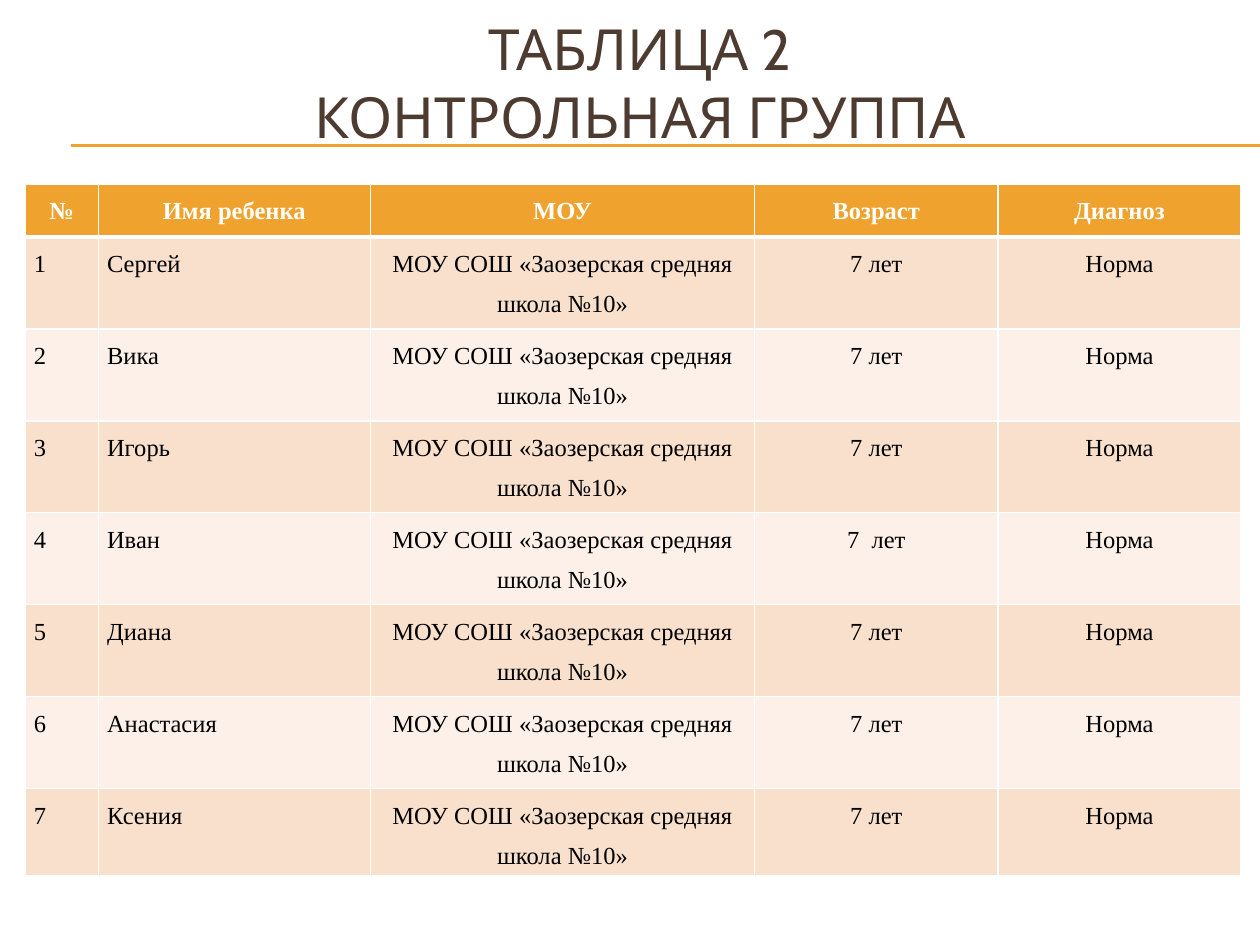
from lxml.etree import SubElement
from pptx import Presentation
from pptx.dml.color import RGBColor
from pptx.enum.shapes import MSO_CONNECTOR
from pptx.enum.text import MSO_ANCHOR, MSO_AUTO_SIZE, PP_ALIGN
from pptx.oxml.ns import qn
from pptx.util import Inches, Pt

WHITE = RGBColor(0xFF, 0xFF, 0xFF)
BLACK = RGBColor(0x00, 0x00, 0x00)
BROWN = RGBColor(0x4E, 0x3B, 0x30)
ORANGE = RGBColor(0xF0, 0xA2, 0x2E)
PEACH = RGBColor(0xF9, 0xE0, 0xCD)
CREAM = RGBColor(0xFC, 0xF0, 0xE8)

SCHOOL = "МОУ СОШ «Заозерская средняя школа №10»"
AGE = "7 лет"
DIAGNOSIS = "Норма"
HEADINGS = ["№", "Имя ребенка", "МОУ", "Возраст", "Диагноз"]
CHILDREN = [("Сергей", AGE), ("Вика", AGE), ("Игорь", AGE), ("Иван", "7  лет"),
            ("Диана", AGE), ("Анастасия", AGE), ("Ксения", AGE)]
COLUMN_WIDTHS = [0.58, 2.16, 3.05, 1.93, 1.93]
ROW_HEIGHTS = [0.42] + [0.73] * 6 + [0.69]


class SlideBuilder:
    title_font = "Cabin"
    table_font = "Times New Roman"

    def __init__(self, slide):
        self.slide = slide

    def add_run(self, paragraph, text, font_name, size, color, bold=False):
        run = paragraph.add_run()
        run.text = text
        run.font.name = font_name
        run.font.size = Pt(size)
        run.font.color.rgb = color
        run.font.bold = bold

    def rule(self, left, right, y):
        line = self.slide.shapes.add_connector(
            MSO_CONNECTOR.STRAIGHT, Inches(left), Inches(y), Inches(right), Inches(y))
        line.line.color.rgb = ORANGE
        line.line.width = Pt(0.75)
        SubElement(line._element.spPr, qn("a:effectLst"))

    def title(self, lines, left, top, width, height):
        heading = self.slide.shapes.title
        heading.left, heading.top = Inches(left), Inches(top)
        heading.width, heading.height = Inches(width), Inches(height)
        frame = heading.text_frame
        frame.word_wrap = True
        frame.auto_size = MSO_AUTO_SIZE.NONE
        frame.vertical_anchor = MSO_ANCHOR.BOTTOM
        frame.margin_bottom = Inches(0.23)
        paragraph = frame.paragraphs[0]
        paragraph.alignment = PP_ALIGN.CENTER
        paragraph.line_spacing = Pt(39)
        for index, text in enumerate(lines):
            if index:
                paragraph.add_line_break()
            self.add_run(paragraph, text, self.title_font, 32.4, BROWN)

    def border(self, cell, side, width):
        properties = cell._tc.get_or_add_tcPr()
        edge = SubElement(properties, qn(f"a:ln{side}"), w=str(Pt(width)))
        fill = SubElement(edge, qn("a:solidFill"))
        SubElement(fill, qn("a:srgbClr"), val=str(WHITE))

    def cell(self, cell, text, fill, color, alignment, is_header, below_header):
        cell.margin_left = cell.margin_right = Inches(0.07)
        cell.margin_top = cell.margin_bottom = 0
        widths = {"L": 1, "R": 1, "T": 3 if below_header else 1, "B": 3 if is_header else 1}
        for side, width in widths.items():
            self.border(cell, side, width)
        cell.fill.solid()
        cell.fill.fore_color.rgb = fill
        paragraph = cell.text_frame.paragraphs[0]
        paragraph.alignment = alignment
        paragraph.line_spacing = 1.5
        paragraph.space_after = Pt(10)
        self.add_run(paragraph, text, self.table_font, 14, color, is_header)

    def table(self, rows, left, top, widths, heights):
        table = self.slide.shapes.add_table(
            len(rows), len(widths), Inches(left), Inches(top),
            Inches(sum(widths)), Inches(sum(heights))).table
        for column, width in zip(table.columns, widths):
            column.width = Inches(width)
        for row, height in zip(table.rows, heights):
            row.height = Inches(height)
        for r, values in enumerate(rows):
            is_header = r == 0
            fill = ORANGE if is_header else (PEACH if r % 2 else CREAM)
            color = WHITE if is_header else BLACK
            for c, text in enumerate(values):
                centered = is_header or c >= 2
                alignment = PP_ALIGN.CENTER if centered else PP_ALIGN.LEFT
                self.cell(table.cell(r, c), text, fill, color, alignment, is_header, r == 1)


def main():
    presentation = Presentation()
    presentation.slide_width = Inches(10)
    presentation.slide_height = Inches(7.5)
    builder = SlideBuilder(presentation.slides.add_slide(presentation.slide_layouts[5]))

    for y in (1.15, 1.16):
        builder.rule(0.56, 10, y)
    builder.title(["ТАБЛИЦА 2", "КОНТРОЛЬНАЯ ГРУППА"], 0.33, 0.5, 9.5, 0.92)
    rows = [HEADINGS] + [[str(number), name, SCHOOL, age, DIAGNOSIS]
                         for number, (name, age) in enumerate(CHILDREN, 1)]
    builder.table(rows, 0.2, 1.46, COLUMN_WIDTHS, ROW_HEIGHTS)
    presentation.save("out.pptx")


if __name__ == "__main__":
    main()
